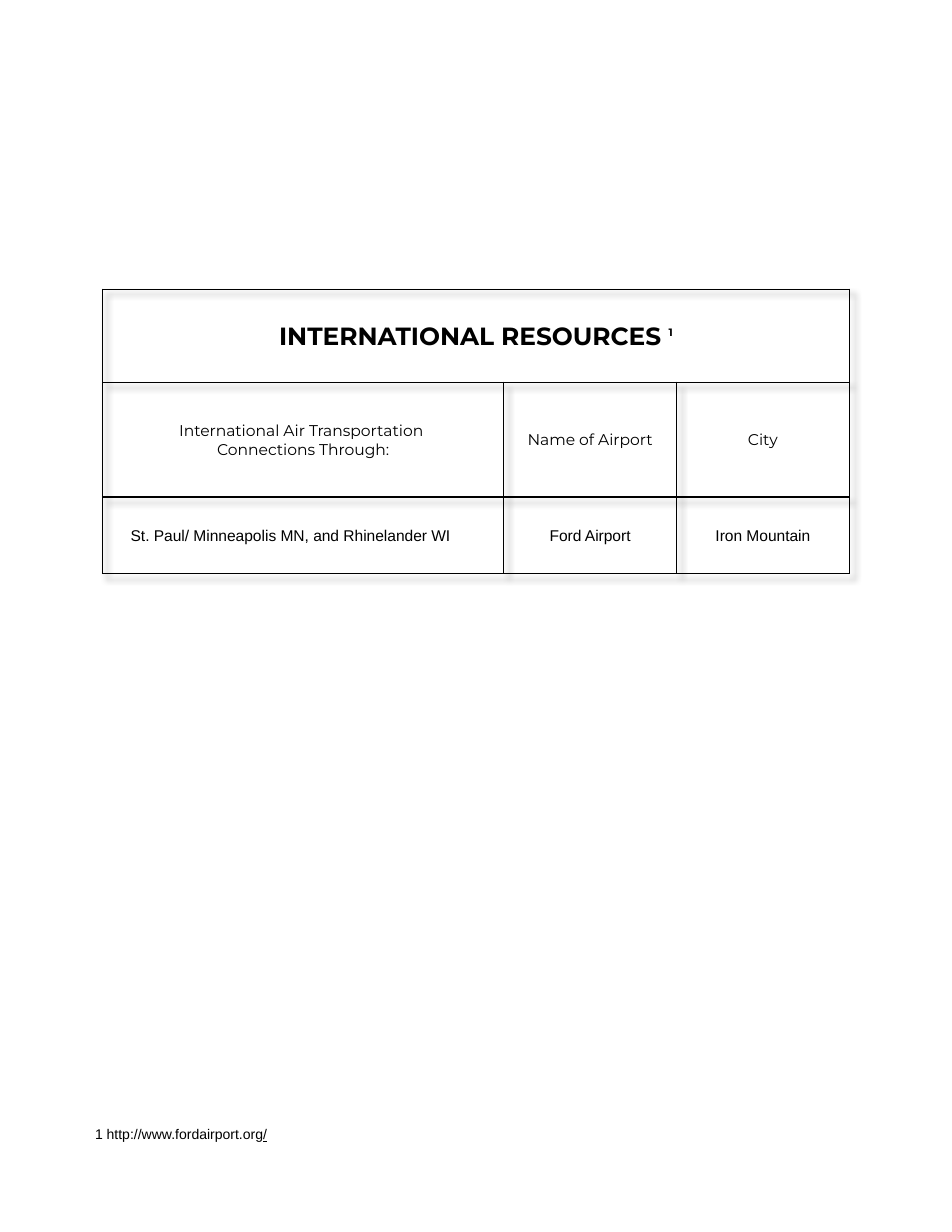
from lxml import etree
from pptx import Presentation
from pptx.dml.color import RGBColor
from pptx.enum.text import MSO_ANCHOR, MSO_AUTO_SIZE, PP_ALIGN
from pptx.oxml.ns import qn
from pptx.util import Pt

CENTER = PP_ALIGN.CENTER
LEFT = PP_ALIGN.LEFT
MIDDLE = MSO_ANCHOR.MIDDLE
GROW = MSO_AUTO_SIZE.SHAPE_TO_FIT_TEXT
BLACK = "000000"
HEADING_FONT = "Montserrat"
BODY_FONT = "Arial"


def color(value):
    return RGBColor.from_string(value)


def add_run(p, text, size, font, bold=False):
    r = p.add_run()
    r.text = text
    r.font.size = Pt(size)
    r.font.name = font
    r.font.bold = bold
    r.font.color.rgb = color(BLACK)
    return r


def add_child(parent, tag, **attributes):
    return etree.SubElement(parent, qn(tag), attributes)


def format_cell(cell, inset=0.72):
    cell.vertical_anchor = MIDDLE
    cell.margin_left = Pt(inset)
    cell.margin_right = cell.margin_top = Pt(0.72)
    cell.margin_bottom = 0
    tc_pr = cell._tc.get_or_add_tcPr()
    for side in ("a:lnL", "a:lnR", "a:lnT", "a:lnB"):
        line = add_child(tc_pr, side, w=str(Pt(1)))
        fill = add_child(line, "a:solidFill")
        add_child(fill, "a:srgbClr", val=BLACK)
    cell.fill.background()


def fill_cell(cell, lines, font, align=CENTER):
    tf = cell.text_frame
    for i, line in enumerate(lines):
        p = tf.add_paragraph() if i else tf.paragraphs[0]
        p.alignment = align
        add_run(p, line, 10, font)


def add_shadow(table):
    effects = etree.Element(qn("a:effectLst"))
    shadow = add_child(effects, "a:outerShdw", blurRad=str(Pt(4)),
                       dist=str(Pt(4)), dir="2700000", algn="tl", rotWithShape="0")
    tint = add_child(shadow, "a:srgbClr", val=BLACK)
    add_child(tint, "a:alpha", val="40000")
    table._tbl.tblPr.insert(0, effects)


def add_resource_table(s):
    widths = (257.8, 111.1, 111.1)
    heights = (59.8, 73.8, 49)
    table = s.shapes.add_table(3, 3, Pt(66), Pt(186), Pt(sum(widths)),
                               Pt(sum(heights))).table
    table.first_row = table.horz_banding = False
    for column, width in zip(table.columns, widths):
        column.width = Pt(width)
    for row, height in zip(table.rows, heights):
        row.height = Pt(height)
    add_shadow(table)
    for cell in table.iter_cells():
        format_cell(cell)

    title = table.cell(0, 0)
    title.merge(table.cell(0, 2))
    p = title.text_frame.paragraphs[0]
    p.alignment = CENTER
    add_run(p, "INTERNATIONAL RESOURCES ", 16, HEADING_FONT, True)
    note = add_run(p, "1", 12, HEADING_FONT, True)
    note._r.get_or_add_rPr().set("baseline", "50000")

    headers = (("International Air Transportation ", "Connections Through:"),
               ("Name of Airport",), ("City",))
    values = ("St. Paul/ Minneapolis MN, and Rhinelander WI",
              "Ford Airport", "Iron Mountain")
    for i, (header, value) in enumerate(zip(headers, values)):
        fill_cell(table.cell(1, i), header, HEADING_FONT)
        fill_cell(table.cell(2, i), (value,), BODY_FONT, CENTER if i else LEFT)
    table.cell(2, 0).margin_left = Pt(18)


def add_footnote(s):
    tf = s.shapes.add_textbox(Pt(54), Pt(720), Pt(198), Pt(18)).text_frame
    tf.word_wrap = True
    tf.auto_size = GROW
    p = tf.paragraphs[0]
    add_run(p, "1 http://www.fordairport.org", 9, BODY_FONT)
    add_run(p, "/", 9, BODY_FONT).font.underline = True


def main():
    prs = Presentation()
    prs.slide_width = Pt(612)
    prs.slide_height = Pt(792)
    s = prs.slides.add_slide(prs.slide_layouts[6])
    add_resource_table(s)
    add_footnote(s)
    prs.save("out.pptx")


if __name__ == "__main__":
    main()
